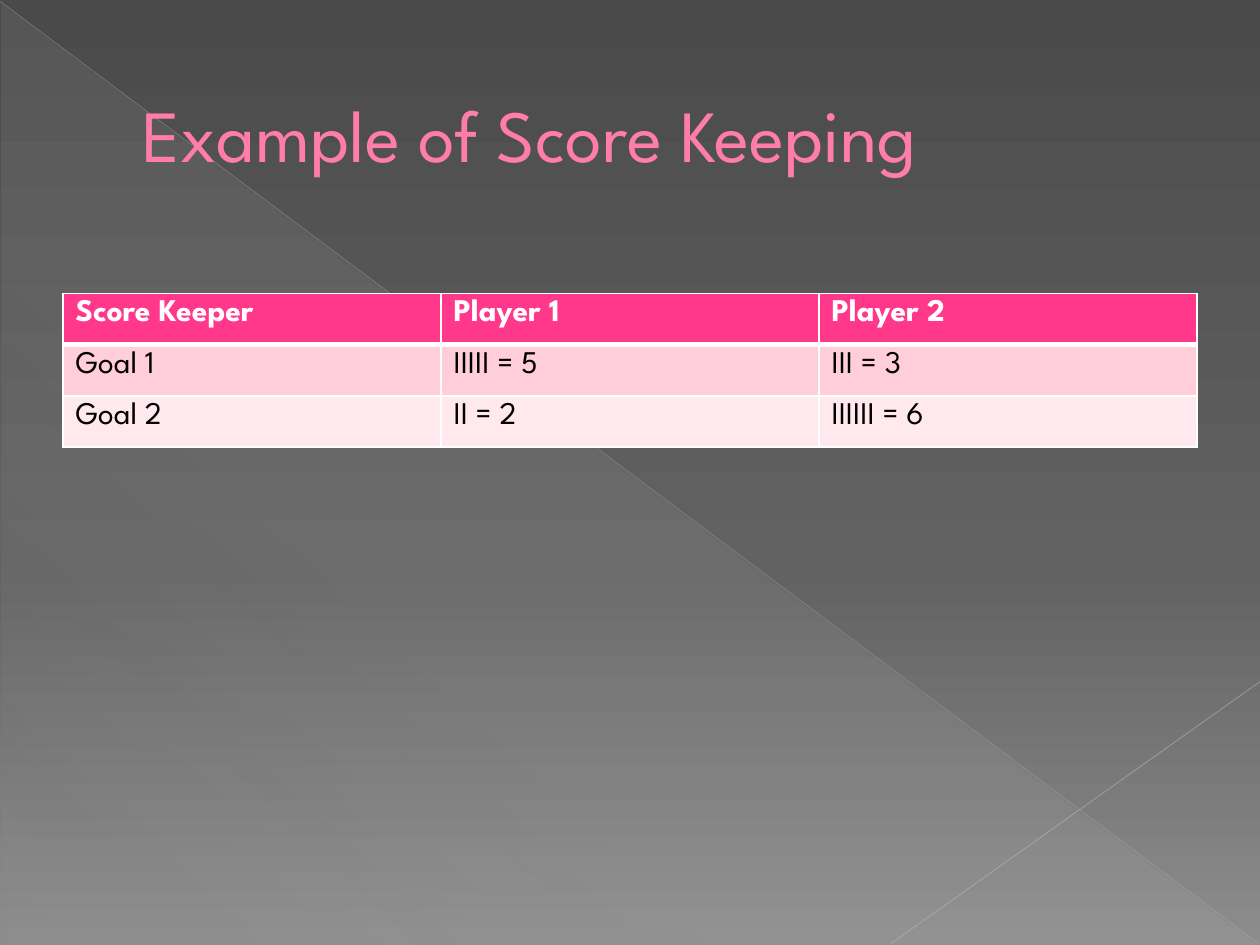
from lxml import etree
from pptx import Presentation
from pptx.dml.color import RGBColor
from pptx.enum.shapes import MSO_CONNECTOR, MSO_SHAPE
from pptx.enum.text import MSO_ANCHOR, PP_ALIGN
from pptx.oxml.ns import qn
from pptx.util import Inches, Pt

LINE = MSO_CONNECTOR.STRAIGHT
WEDGE = MSO_SHAPE.RIGHT_TRIANGLE
MIDDLE = MSO_ANCHOR.MIDDLE
LEFT = PP_ALIGN.LEFT

FONT = "League Spartan"
WHITE = RGBColor(0xFF, 0xFF, 0xFF)
BLACK = RGBColor(0x00, 0x00, 0x00)
ROSE = RGBColor(0xFF, 0x7D, 0xA7)
PINK = RGBColor(0xFF, 0x38, 0x8C)
BLUSH = RGBColor(0xFF, 0xCE, 0xDA)
PALE = RGBColor(0xFF, 0xE8, 0xEE)
DARK = RGBColor(0x4A, 0x4A, 0x4A)
MID = RGBColor(0x62, 0x62, 0x62)
LIGHT = RGBColor(0x8C, 0x8C, 0x8C)
MIST = RGBColor(0xD2, 0xD2, 0xD2)
ASH = RGBColor(0xBF, 0xBF, 0xBF)
SILVER = RGBColor(0xC6, 0xC6, 0xC6)

SCORES = [
    ["Score Keeper", "Player 1", "Player 2"],
    ["Goal 1", "IIIII = 5", "III = 3"],
    ["Goal 2", "II = 2", "IIIIII = 6"],
]
FILLS = [PINK, BLUSH, PALE]


def style(item, values):
    for name, value in values.items():
        setattr(item, name, value)


def add_tint(parent, color, alpha=100):
    tint = etree.SubElement(parent, qn("a:srgbClr"), val=str(color))
    if alpha < 100:
        etree.SubElement(tint, qn("a:alpha"), val=str(alpha * 1000))


def set_blend(fill, props, stops, angle):
    fill.gradient()
    fill.gradient_angle = 360 - angle
    stop_list = props.find(qn("a:gradFill")).find(qn("a:gsLst"))
    for old in list(stop_list):
        stop_list.remove(old)
    for place, color, alpha in stops:
        stop = etree.SubElement(stop_list, qn("a:gs"), pos=str(place * 1000))
        add_tint(stop, color, alpha)


def add_wedge(slide, box, stops, angle):
    wedge = slide.shapes.add_shape(WEDGE, *map(Inches, box))
    wedge.shadow.inherit = False
    wedge.line.fill.background()
    set_blend(wedge.fill, wedge.element.spPr, stops, angle)


def add_line(slide, ends, color, width, alpha):
    line = slide.shapes.add_connector(LINE, *map(Inches, ends))
    line.line.width = Pt(width)
    line.line.color.rgb = color
    props = line.element.spPr
    tint = next(props.iter(qn("a:srgbClr")))
    etree.SubElement(tint, qn("a:alpha"), val=str(alpha * 1000))
    etree.SubElement(props, qn("a:effectLst"))


def set_text(frame, text, size, color, bold=False):
    frame.text = text
    part = frame.paragraphs[0]
    part.alignment = LEFT
    font = part.runs[0].font
    style(font, {"name": FONT, "size": Pt(size), "bold": bold})
    font.color.rgb = color
    return part


def set_title(slide, text, box):
    title = slide.shapes.title
    names = ["left", "top", "width", "height"]
    style(title, dict(zip(names, map(Inches, box))))
    style(title.text_frame, {"vertical_anchor": MIDDLE, "word_wrap": True})
    part = set_text(title.text_frame, text, 42, ROSE)
    props = part._p.get_or_add_pPr()
    props.set("marL", str(Inches(0.53)))
    props.set("indent", "0")
    slide.shapes.element.append(title.element)


def set_edges(cell, widths):
    props = cell._tc.get_or_add_tcPr()
    for index, (side, width) in enumerate(widths.items()):
        edge = etree.Element(qn("a:ln" + side), w=str(Pt(width)))
        add_tint(etree.SubElement(edge, qn("a:solidFill")), WHITE)
        props.insert(index, edge)


def add_scores(slide, box):
    size = len(SCORES), len(SCORES[0])
    table = slide.shapes.add_table(*size, *map(Inches, box)).table
    for row, words in enumerate(SCORES):
        head = row == 0
        for col, text in enumerate(words):
            cell = table.cell(row, col)
            cell.fill.solid()
            cell.fill.fore_color.rgb = FILLS[row]
            set_text(cell.text_frame, text, 18, WHITE if head else BLACK, head)
            top = 3 if row == 1 else 1
            base = 3 if head else 1
            set_edges(cell, {"L": 1, "R": 1, "T": top, "B": base})


def main():
    deck = Presentation()
    style(deck, {"slide_width": Inches(10), "slide_height": Inches(7.5)})
    slide = deck.slides.add_slide(deck.slide_layouts[5])
    fill = slide.background.fill
    props = slide.element.find(".//" + qn("p:bgPr"))
    set_blend(fill, props,
              [(0, DARK, 100), (60, MID, 100), (100, LIGHT, 100)], 90)
    add_wedge(slide, (0.01, 0.02, 9.98, 7.48),
              [(0, MIST, 10), (70, MIST, 8), (100, MIST, 1)], 133)
    add_line(slide, (0, 0.01, 9.99, 7.49), ASH, 0.39, 35)
    add_line(slide, (10, 5.41, 7.07, 7.49), SILVER, 0.47, 45)
    set_title(slide, "Example of Score Keeping", (0.5, 0.29, 9, 1.53))
    add_scores(slide, (0.5, 2.33, 9, 1.22))
    deck.save("out.pptx")


if __name__ == "__main__":
    main()
